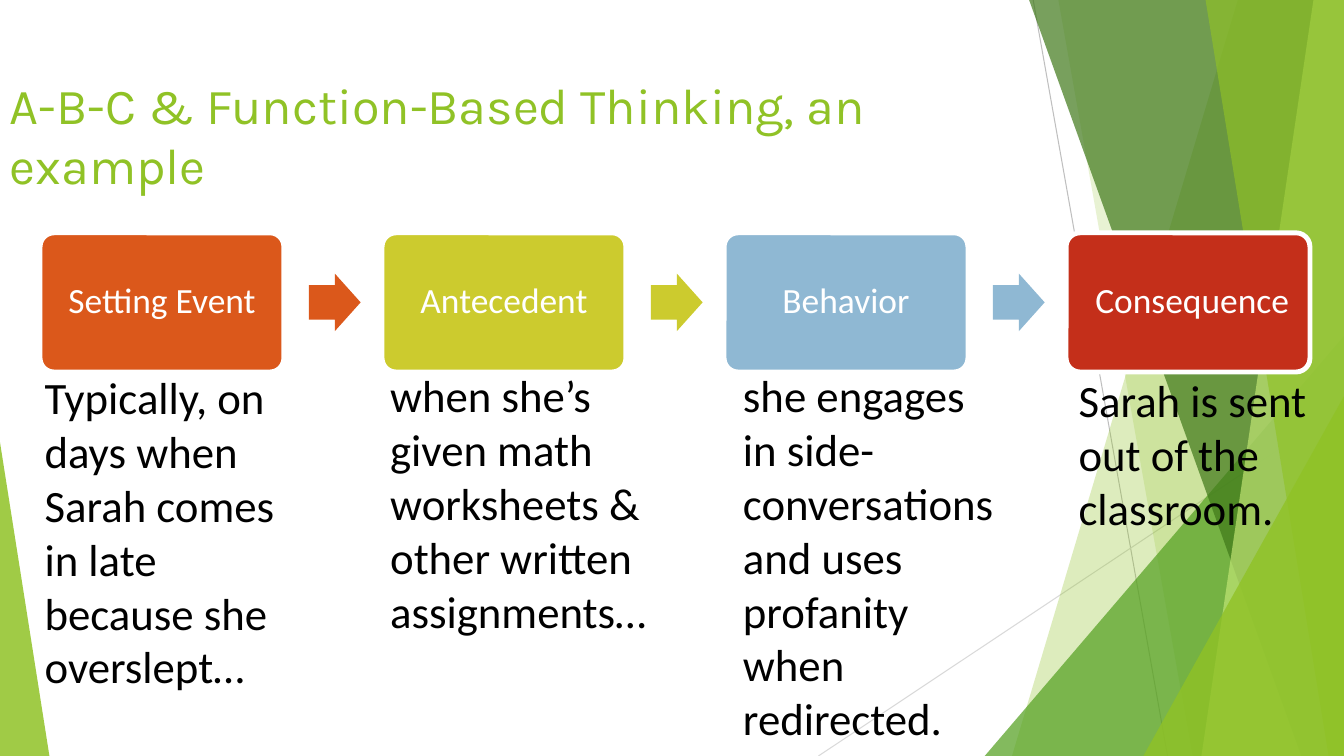
from lxml import etree
from pptx import Presentation
from pptx.dml.color import RGBColor
from pptx.enum import shapes, text
from pptx.oxml import ns
from pptx.util import Pt

WIDTH, HEIGHT = 960, 540
GREEN = "90C226"


def paint(target, color, alpha=100):
    """Give a fill a solid colour; alpha is its opacity in percent."""
    target.solid()
    target.fore_color.rgb = RGBColor.from_string(color)
    if alpha < 100:
        # The colour element is the only child of the solid fill
        srgb = target._xPr.find(ns.qn("a:solidFill"))[0]
        etree.SubElement(srgb, ns.qn("a:alpha"), val=str(alpha * 1000))


def write(shape, content, size, color, font="Calibri", align=text.PP_ALIGN.LEFT,
          anchor=text.MSO_ANCHOR.TOP, insets=(9.4, 5, 9.4, 5), spacing=None):
    """Fill a shape with one paragraph; insets are left, top, right, bottom."""
    frame = shape.text_frame
    frame.word_wrap = True
    frame.vertical_anchor = anchor
    (frame.margin_left, frame.margin_top,
     frame.margin_right, frame.margin_bottom) = map(Pt, insets)
    paragraph = frame.paragraphs[0]
    paragraph.alignment = align
    if spacing:
        paragraph.line_spacing = spacing
    run = paragraph.add_run()
    run.text = content
    run.font.name = font
    run.font.size = Pt(size)
    paint(run.font.fill, color)


presentation = Presentation()
presentation.slide_width = Pt(WIDTH)
presentation.slide_height = Pt(HEIGHT)
slide = presentation.slides.add_slide(presentation.slide_layouts[6])
canvas = slide.shapes

# Thin background lines
for x1, y1, x2, y2, color in [
    (738, 0, 834, HEIGHT, "BFBFBF"),
    (WIDTH, 290, 584.6, HEIGHT, "D9D9D9"),
]:
    line = canvas.add_connector(shapes.MSO_CONNECTOR.STRAIGHT, Pt(x1), Pt(y1), Pt(x2), Pt(y2))
    line.line.width = Pt(0.75)
    paint(line.line.fill, color)
    etree.SubElement(line._element.spPr, ns.qn("a:effectLst"))

# Facets: slabs (top x, bottom x) reach the right edge,
# triangles (left, top, width, tip) stand on the bottom edge
for points, color, alpha in [
    ((884.2, 722.9), GREEN, 30),
    ((756, 851.8), GREEN, 20),
    ((703.4, 240, 256.6, 1), "54A021", 72),
    ((735.1, 929.5), "3F7819", 70),
    ((938.2, 858.2), "C0E474", 70),
    ((861.1, 949), GREEN, 65),
    ((816.7, 283, 143.3, 1), GREEN, 80),
    ((0, 316, 35.3, 0), GREEN, 85),
]:
    if len(points) == 2:
        top_x, bottom_x = points
        builder = canvas.build_freeform(Pt(top_x), 0)
        builder.add_line_segments([(Pt(WIDTH), 0), (Pt(WIDTH), Pt(HEIGHT)),
                                   (Pt(bottom_x), Pt(HEIGHT))])
        facet = builder.convert_to_shape()
    else:
        left, top, width, tip = points
        facet = canvas.add_shape(shapes.MSO_SHAPE.ISOSCELES_TRIANGLE,
                                 Pt(left), Pt(top), Pt(width), Pt(HEIGHT - top))
        facet.adjustments[0] = tip
    facet.shadow.inherit = False
    facet.line.fill.background()
    paint(facet.fill, color, alpha)

# Chain of steps; the last label sits a little to the right
STEP_LEFT, STEP_TOP, STEP_WIDTH, STEP_HEIGHT, PITCH = 28.6, 166.3, 174.2, 99.4, 244.3
steps = [("Setting Event", "DB581B", 8), ("Antecedent", "CCCB2E", 8),
         ("Behavior", "8FB8D3", 8), ("Consequence", "C42F1A", 14)]
for index, (label, color, inset) in enumerate(steps):
    left = STEP_LEFT + index * PITCH
    step = canvas.add_shape(shapes.MSO_SHAPE.ROUNDED_RECTANGLE, Pt(left), Pt(STEP_TOP),
                            Pt(STEP_WIDTH), Pt(STEP_HEIGHT))
    step.adjustments[0] = 0.1
    step.shadow.inherit = False
    step.line.width = Pt(3.5)
    paint(step.line.fill, "FFFFFF")
    paint(step.fill, color)
    write(step, label, 25.3, "FFFFFF", align=text.PP_ALIGN.CENTER,
          anchor=text.MSO_ANCHOR.MIDDLE, insets=(inset, 8, 8, 8), spacing=0.9)
    if index < len(steps) - 1:
        arrow = canvas.add_shape(shapes.MSO_SHAPE.RIGHT_ARROW, Pt(left + 192.1), Pt(195.4),
                                 Pt(36.9), Pt(41.2))
        arrow.adjustments[0] = 0.6
        arrow.shadow.inherit = False
        arrow.line.fill.background()
        paint(arrow.fill, color)

# Example under each step
for left, top, width, height, content in [
    (22.4, 259.4, 209.5, 267, "Typically, on days when Sarah comes in late because she overslept…"),
    (269.3, 258, 216, 257, "when she’s given math worksheets & other written assignments…"),
    (521.3, 258, 203, 257,
     "she engages in side-conversations and uses profanity when redirected."),
    (761, 261.4, 197.3, 253.4, "Sarah is sent out of the classroom."),
]:
    example = canvas.add_textbox(Pt(left), Pt(top), Pt(width), Pt(height))
    write(example, content, 32, "000000")

title = canvas.add_textbox(0, Pt(44), Pt(764), Pt(103.7))
write(title, "A-B-C & Function-Based Thinking, an example", 36, GREEN, font="Karla",
      anchor=text.MSO_ANCHOR.MIDDLE, insets=(7.2, 3.6, 7.2, 3.6))

presentation.save("out.pptx")
